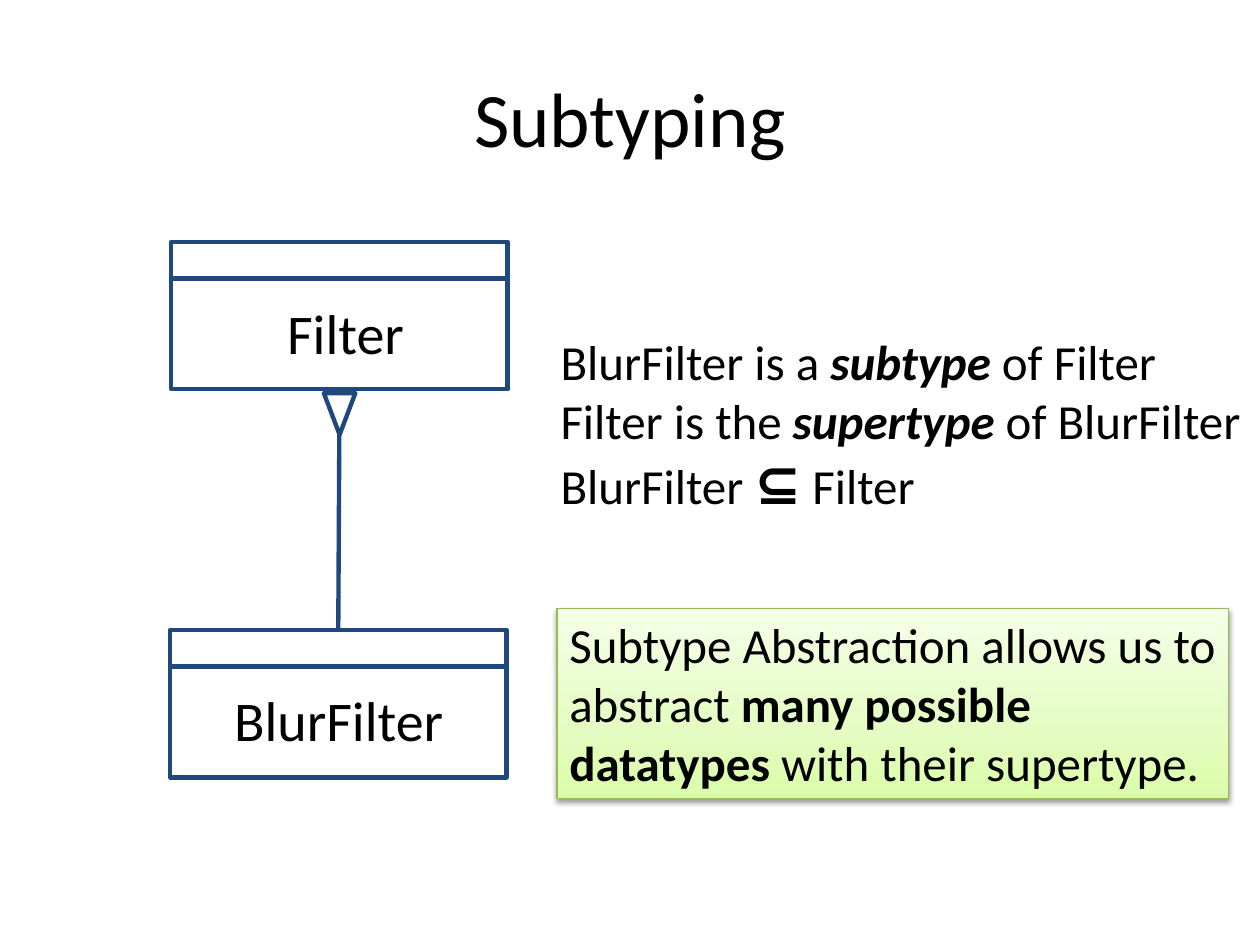
from lxml.etree import SubElement
from pptx import Presentation
from pptx.dml.color import RGBColor
from pptx.enum.shapes import MSO_CONNECTOR, MSO_SHAPE
from pptx.enum.text import MSO_ANCHOR, MSO_AUTO_SIZE, PP_ALIGN
from pptx.oxml.ns import qn
from pptx.util import Inches, Pt

NAVY = RGBColor(0x1F, 0x49, 0x7D)
GREEN = RGBColor(0x98, 0xB9, 0x55)
BLACK = RGBColor(0, 0, 0)
WHITE = RGBColor(0xFF, 0xFF, 0xFF)
GRADIENT = [(0, "DAFDA7"), (35, "E4FCC2"), (100, "F5FFE7")]

BOLD = {"bold": True}
BOLD_ITALIC = {"bold": True, "italic": True}
TITLE = [[("Subtyping", {})]]
CLASSES = [
    ("Filter", (1.36, 1.92), (2.18, 2.32, 1.14, 0.64)),
    ("BlurFilter", (1.35, 5), (1.76, 5.39, 1.88, 0.64)),
]
CLASS_SIZE = (2.67, 1.17)
HEADER = 0.29
RELATIONS = [
    [("BlurFilter is a ", {}), ("subtype", BOLD_ITALIC), (" of Filter", {})],
    [("Filter is the ", {}), ("supertype", BOLD_ITALIC), (" of BlurFilter", {})],
    [("BlurFilter ", {}), ("⊆", {"bold": True, "size": Pt(32)}), (" Filter", {})],
]
SUMMARY = [[
    ("Subtype Abstraction allows us to abstract", {}),
    (" many possible datatypes", BOLD),
    (" with their supertype.", {}),
]]

prs = Presentation()
prs.slide_width, prs.slide_height = Inches(10), Inches(7.5)
s = prs.slides.add_slide(prs.slide_layouts[6])


def inches(values):
    return [Inches(v) for v in values]


def write(tf, paragraphs, size, align=PP_ALIGN.LEFT, **frame):
    for name, value in frame.items():
        setattr(tf, name, value)
    for i, runs in enumerate(paragraphs):
        p = tf.paragraphs[0] if i == 0 else tf.add_paragraph()
        p.alignment = align
        for text, extra in runs:
            r = p.add_run()
            r.text = text
            r.font.color.rgb = BLACK
            for name, value in {"name": "Calibri", "size": Pt(size), **extra}.items():
                setattr(r.font, name, value)


def add_text(box, paragraphs, size, **options):
    sp = s.shapes.add_textbox(*inches(box))
    write(sp.text_frame, paragraphs, size, **options)


def add_shape(kind, box, color, width, fill=None):
    sp = s.shapes.add_shape(kind, *inches(box))
    sp.shadow.inherit = False
    sp.line.color.rgb = color
    sp.line.width = Pt(width)
    if fill is None:
        sp.fill.background()
    else:
        sp.fill.solid()
        sp.fill.fore_color.rgb = fill
    return sp


def add_line(x1, y1, x2, y2):
    line = s.shapes.add_connector(MSO_CONNECTOR.STRAIGHT, *inches((x1, y1, x2, y2)))
    line.line.color.rgb = NAVY
    line.line.width = Pt(2.5)
    SubElement(line._element.spPr, qn("a:effectLst"))
    return line


def add_class(name, corner, label):
    x, y = corner
    sp = add_shape(MSO_SHAPE.RECTANGLE, (x, y, *CLASS_SIZE), NAVY, 2.5)
    add_line(x - 0.01, y + HEADER, x + CLASS_SIZE[0], y + HEADER)
    add_text(label, [[(name, {})]], 32, word_wrap=False)
    return sp


def add_summary(box):
    sp = add_shape(MSO_SHAPE.RECTANGLE, box, GREEN, 0.75)
    sp.fill.gradient()
    sp.fill.gradient_angle = 90
    spPr = sp._element.spPr
    stops = spPr.find(qn("a:gradFill")).find(qn("a:gsLst"))
    for stop in list(stops):
        stops.remove(stop)
    for pos, color in GRADIENT:
        stop = SubElement(stops, qn("a:gs"), pos=str(pos * 1000))
        SubElement(stop, qn("a:srgbClr"), val=color)
    shadow = SubElement(
        spPr.find(qn("a:effectLst")), qn("a:outerShdw"), blurRad=str(Pt(3.1)),
        dist=str(Pt(1.6)), dir="5400000", rotWithShape="0")
    color = SubElement(shadow, qn("a:srgbClr"), val="000000")
    SubElement(color, qn("a:alpha"), val="38000")
    write(sp.text_frame, SUMMARY, 28, word_wrap=True, vertical_anchor=MSO_ANCHOR.TOP,
          auto_size=MSO_AUTO_SIZE.SHAPE_TO_FIT_TEXT)


add_text((0.5, 0.3, 9, 1.25), TITLE, 44, align=PP_ALIGN.CENTER, word_wrap=True,
         vertical_anchor=MSO_ANCHOR.MIDDLE)
supertype, subtype = [add_class(*c) for c in CLASSES]
inheritance = add_line(2.69, 5, 2.7, 3.09)
inheritance.begin_connect(subtype, 0)
inheritance.end_connect(supertype, 2)
add_text((4.35, 2.58, 5.65, 1.58), RELATIONS, 28, word_wrap=False)
arrow = add_shape(MSO_SHAPE.ISOSCELES_TRIANGLE, (2.57, 3.12, 0.25, 0.33), NAVY, 2.5, WHITE)
arrow.rotation = 180
add_summary((4.42, 4.83, 5.33, 1.51))

prs.save("out.pptx")
